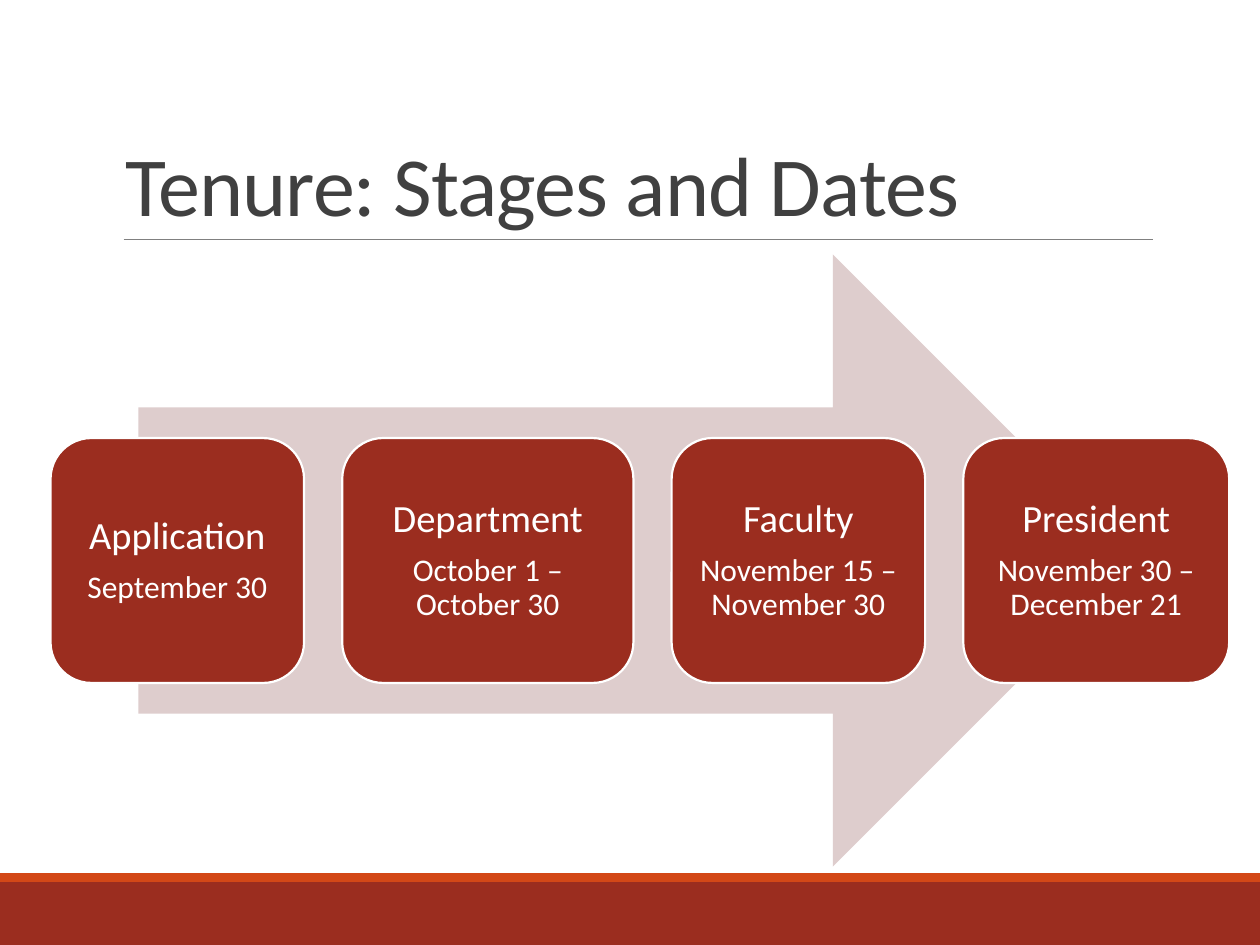
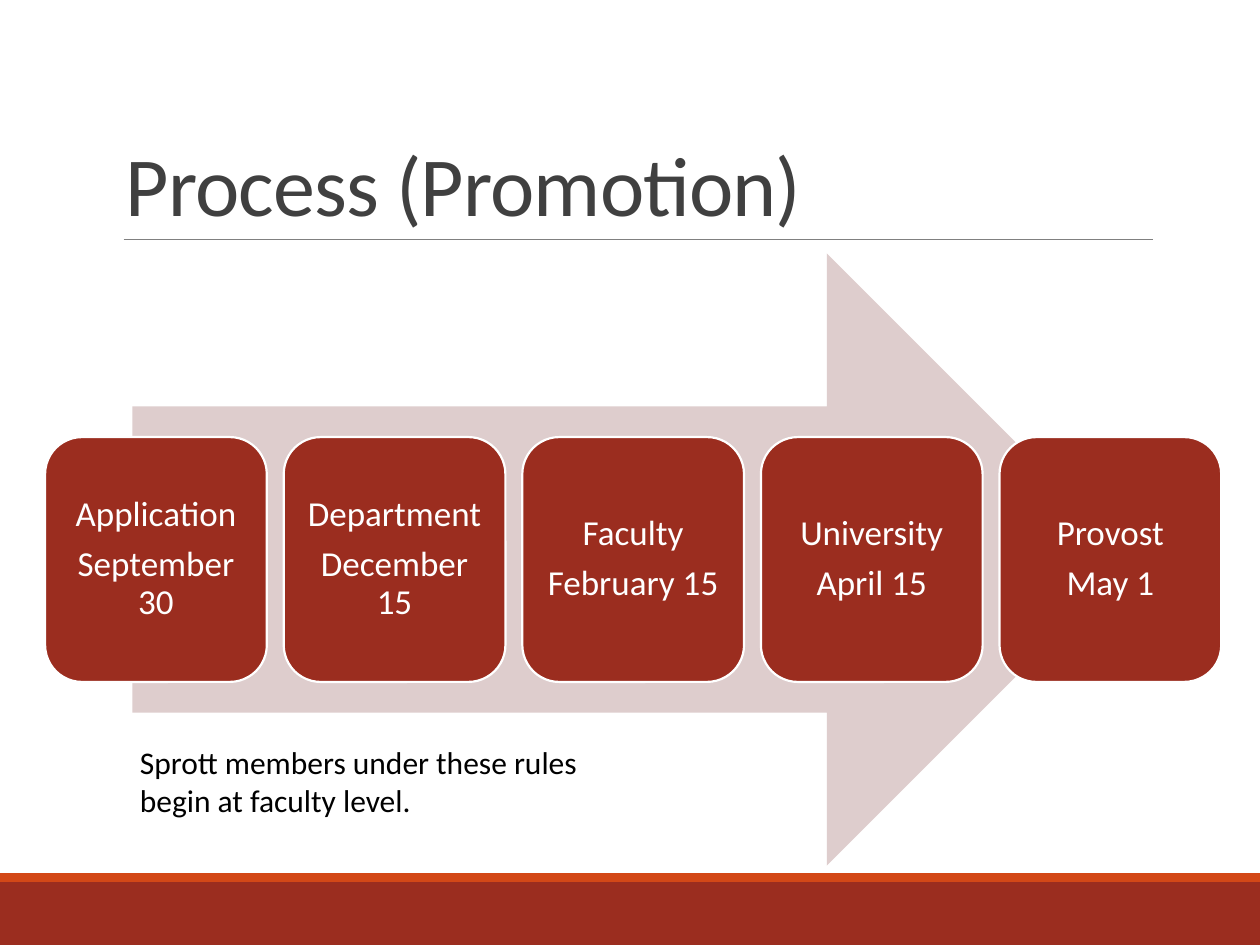
from lxml import etree
from pptx import Presentation
from pptx.dml.color import RGBColor
from pptx.enum.shapes import MSO_CONNECTOR, MSO_SHAPE
from pptx.enum.text import MSO_ANCHOR, PP_ALIGN
from pptx.oxml.ns import qn
from pptx.util import Cm, Pt

RECT = MSO_SHAPE.RECTANGLE
ROUND_RECT = MSO_SHAPE.ROUNDED_RECTANGLE
RIGHT_ARROW = MSO_SHAPE.RIGHT_ARROW
STRAIGHT = MSO_CONNECTOR.STRAIGHT
MIDDLE = MSO_ANCHOR.MIDDLE
BOTTOM = MSO_ANCHOR.BOTTOM
CENTER = PP_ALIGN.CENTER

FONT = "Calibri"
RED = "9B2D1F"
ORANGE = "D34817"
PINK = "DECDCD"
GRAY = "808080"
DARK = "404040"
WHITE = "FFFFFF"
BLACK = "000000"

SLIDE_W, SLIDE_H = 25.4, 19.05
ARROW_W, ARROW_H = 20.17, 12.34


def rgb(value):
    return RGBColor.from_string(value)


class Deck:
    def __init__(self):
        self.prs = Presentation()
        self.prs.slide_width = Cm(SLIDE_W)
        self.prs.slide_height = Cm(SLIDE_H)
        self.s = None

    def slide(self, title):
        self.s = self.prs.slides.add_slide(self.prs.slide_layouts[6])
        self.shape(RECT, 0, 17.78, SLIDE_W, 1.27, RED)
        self.shape(RECT, 0, 17.6, SLIDE_W, 0.18, ORANGE)
        self.rule(2.49, 4.83, 23.24)
        self.title(title)

    def shape(self, kind, x, y, w, h, fill, line=None):
        sp = self.s.shapes.add_shape(kind, Cm(x), Cm(y), Cm(w), Cm(h))
        sp.shadow.inherit = False
        sp.fill.solid()
        sp.fill.fore_color.rgb = rgb(fill)
        if line:
            sp.line.color.rgb = rgb(line)
            sp.line.width = Pt(1.25)
        else:
            sp.line.fill.background()
        return sp

    def rule(self, x1, y, x2):
        line = self.s.shapes.add_connector(STRAIGHT, Cm(x1), Cm(y), Cm(x2), Cm(y))
        line.line.color.rgb = rgb(GRAY)
        line.line.width = Pt(0.5)
        etree.SubElement(line._element.spPr, qn("a:effectLst"))

    def style(self, p, size, color):
        p.font.name = FONT
        p.font.size = Pt(size)
        p.font.color.rgb = rgb(color)

    def text(self, lines, x, y, w, h, size, color):
        tf = self.s.shapes.add_textbox(Cm(x), Cm(y), Cm(w), Cm(h)).text_frame
        tf.word_wrap = True
        tf.text = "\n".join(lines)
        for p in tf.paragraphs:
            self.style(p, size, color)
        return tf

    def title(self, title):
        tf = self.text([title], 2.29, 0.79, 20.95, 4.04, 48, DARK)
        tf.vertical_anchor = BOTTOM
        p = tf.paragraphs[0]
        p.line_spacing = 0.85
        p.runs[0]._r.get_or_add_rPr().set("spc", "-50")

    def stage(self, x, y, w, h, texts, sizes, inset):
        tf = self.shape(ROUND_RECT, x, y, w, h, RED, WHITE).text_frame
        tf.word_wrap = True
        tf.vertical_anchor = MIDDLE
        tf.margin_left = tf.margin_right = Cm(inset)
        tf.margin_top = tf.margin_bottom = Cm(inset)
        tf.text = "\n".join(texts)
        for p, size in zip(tf.paragraphs, sizes):
            p.alignment = CENTER
            p.line_spacing = 0.9
            self.style(p, size, WHITE)
        tf.paragraphs[0].space_after = Pt(0.35 * sizes[0])

    def process(self, arrow_x, arrow_y, x, gap, stages, sizes, inset):
        self.shape(RIGHT_ARROW, arrow_x, arrow_y, ARROW_W, ARROW_H, PINK)
        y, h = arrow_y + 0.3 * ARROW_H, 0.4 * ARROW_H
        for name, date, w in stages:
            self.stage(x, y, w, h, (name, date), sizes, inset)
            x += w + gap


def main():
    deck = Deck()

    deck.slide("Tenure: Stages and Dates")
    tenure = [
        ("Application", "September 30", 5.11),
        ("Department", "October 1 – October 30", 5.87),
        ("Faculty", "November 15 – November 30", 5.11),
        ("President", "November 30 – December 21", 5.36),
    ]
    deck.process(2.79, 5.13, 1.02, 0.77, tenure, (22, 18), 0.23)

    deck.slide("Process (Promotion)")
    promotion = [
        ("Application", "September 30", 4.47),
        ("Department", "December 15", 4.47),
        ("Faculty", "February 15", 4.47),
        ("University", "April 15", 4.47),
        ("Provost", "May 1", 4.47),
    ]
    deck.process(2.67, 5.11, 0.91, 0.34, promotion, (20, 20), 0.21)
    note = ["Sprott members under these rules", "begin at faculty level."]
    deck.text(note, 2.57, 14.86, 9.45, 1.8, 18, BLACK)

    deck.prs.save("out.pptx")


if __name__ == "__main__":
    main()
